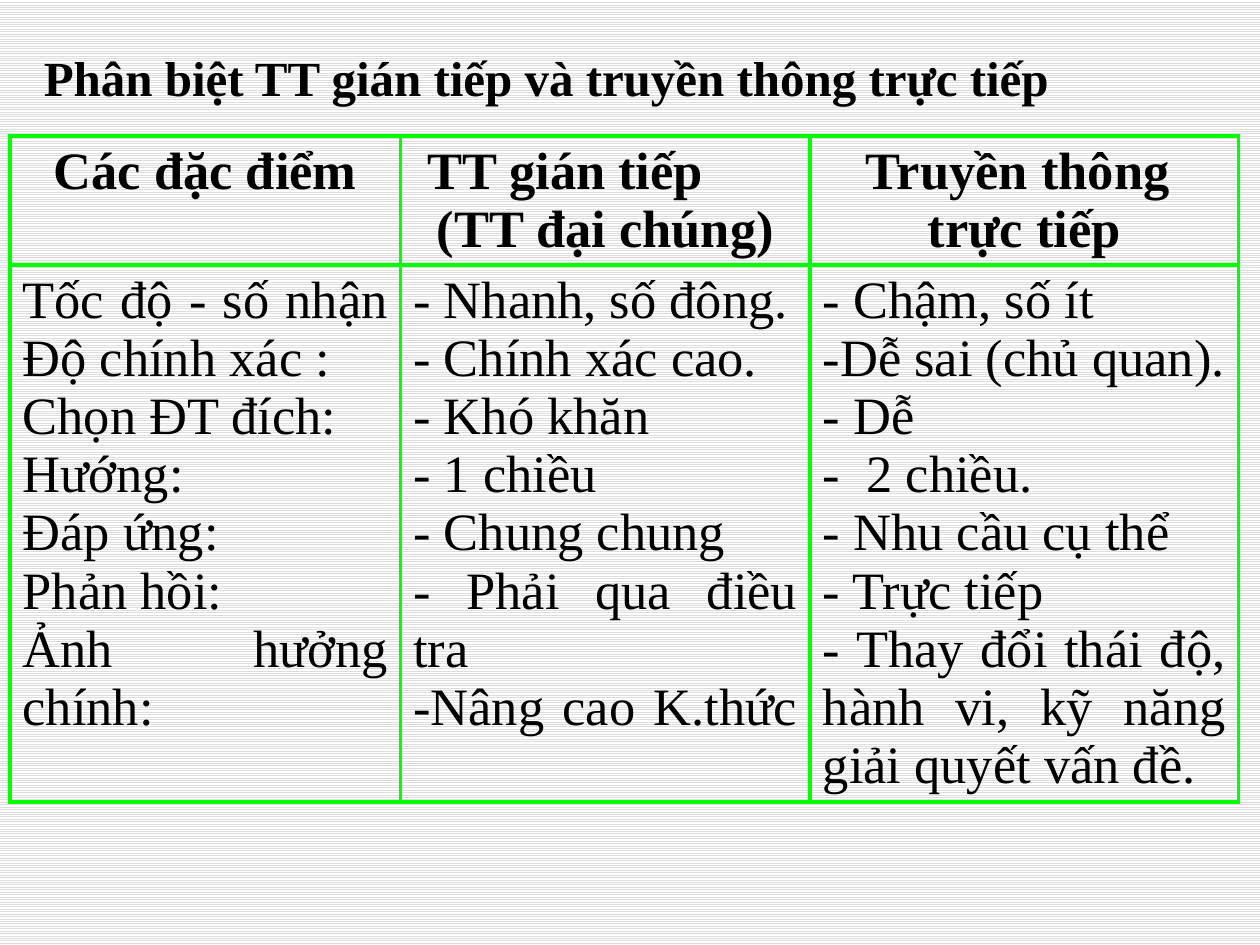
from lxml import etree
from pptx import Presentation
from pptx.dml.color import RGBColor
from pptx.enum.dml import MSO_PATTERN
from pptx.enum.text import MSO_AUTO_SIZE, PP_ALIGN
from pptx.oxml.ns import qn
from pptx.util import Inches, Pt

LEFT, CENTER, JUSTIFY = PP_ALIGN.LEFT, PP_ALIGN.CENTER, PP_ALIGN.JUSTIFY
LIGHT_HORIZONTAL = MSO_PATTERN.LIGHT_HORIZONTAL
GROW = MSO_AUTO_SIZE.SHAPE_TO_FIT_TEXT
BLACK = RGBColor(0x00, 0x00, 0x00)
WHITE = RGBColor(0xFF, 0xFF, 0xFF)
STRIPE = RGBColor(0xDD, 0xDD, 0xDD)
GREEN = RGBColor(0x00, 0xFF, 0x00)
FONT = "Times New Roman"

TITLE = "Phân biệt TT gián tiếp và truyền thông trực tiếp"
HEADERS = [
    ["Các đặc điểm"],
    ["TT gián tiếp", "(TT đại chúng)"],
    ["Truyền thông ", "trực tiếp"],
]
FEATURES = [
    ["Tốc độ - số nhận ", "Độ chính xác :", "Chọn ĐT đích:", "Hướng:",
     "Đáp ứng:", "Phản hồi:", "Ảnh hưởng chính:"],
    ["- Nhanh, số đông.", "- Chính xác cao.", "- Khó khăn", "- 1 chiều",
     "- Chung chung", "- Phải qua điều tra", "-Nâng cao K.thức  "],
    ["- Chậm, số ít", "-Dễ sai (chủ quan).", "- Dễ", "-  2 chiều.",
     "- Nhu cầu cụ thể", "- Trực tiếp",
     "- Thay đổi thái độ, hành vi, kỹ năng giải quyết vấn đề."],
]
COLUMN_WIDTHS = [3.1, 3.25, 3.4]
ROW_HEIGHTS = [1.02, 4.26]


def write(frame, lines, size=30, bold=False, align=LEFT):
    frame.word_wrap = True
    for index, line in enumerate(lines):
        paragraph = frame.paragraphs[0] if index == 0 else frame.add_paragraph()
        paragraph.alignment = align
        run = paragraph.add_run()
        run.text = line
        run.font.name = FONT
        run.font.size = Pt(size)
        run.font.bold = bold
        run.font.color.rgb = BLACK


def outline(cell):
    properties = cell._tc.get_or_add_tcPr()
    for position, side in enumerate(("a:lnL", "a:lnR", "a:lnT", "a:lnB")):
        border = etree.Element(qn(side), w=str(Pt(2.25)))
        fill = etree.SubElement(border, qn("a:solidFill"))
        etree.SubElement(fill, qn("a:srgbClr"), val=str(GREEN))
        properties.insert(position, border)


def main():
    deck = Presentation()
    deck.slide_width, deck.slide_height = Inches(10), Inches(7.5)
    slide = deck.slides.add_slide(deck.slide_layouts[6])
    background = slide.background.fill
    background.patterned()
    background.pattern = LIGHT_HORIZONTAL
    background.fore_color.rgb = STRIPE
    background.back_color.rgb = WHITE

    comparison = slide.shapes.add_table(
        2, 3, Inches(0.08), Inches(1.08),
        Inches(sum(COLUMN_WIDTHS)), Inches(sum(ROW_HEIGHTS))).table
    for column, width in zip(comparison.columns, COLUMN_WIDTHS):
        column.width = Inches(width)
    for row, height in zip(comparison.rows, ROW_HEIGHTS):
        row.height = Inches(height)
    for r, entries in enumerate((HEADERS, FEATURES)):
        for c, lines in enumerate(entries):
            cell = comparison.cell(r, c)
            cell.fill.background()
            outline(cell)
            write(cell.text_frame, lines, bold=r == 0,
                  align=CENTER if r == 0 else JUSTIFY)

    indirect = comparison.cell(0, 1).text_frame.paragraphs[0]
    indirect.alignment = LEFT
    indirect._p.get_or_add_pPr().set("marL", str(Inches(0.11)))

    title = slide.shapes.add_textbox(
        Inches(0.25), Inches(0.33), Inches(9.5), Inches(0.57)).text_frame
    title.auto_size = GROW
    write(title, [TITLE], size=28, bold=True)
    spacing = etree.SubElement(
        title.paragraphs[0]._p.get_or_add_pPr(), qn("a:spcBef"))
    etree.SubElement(spacing, qn("a:spcPct"), val="50000")

    deck.save("out.pptx")


if __name__ == "__main__":
    main()
